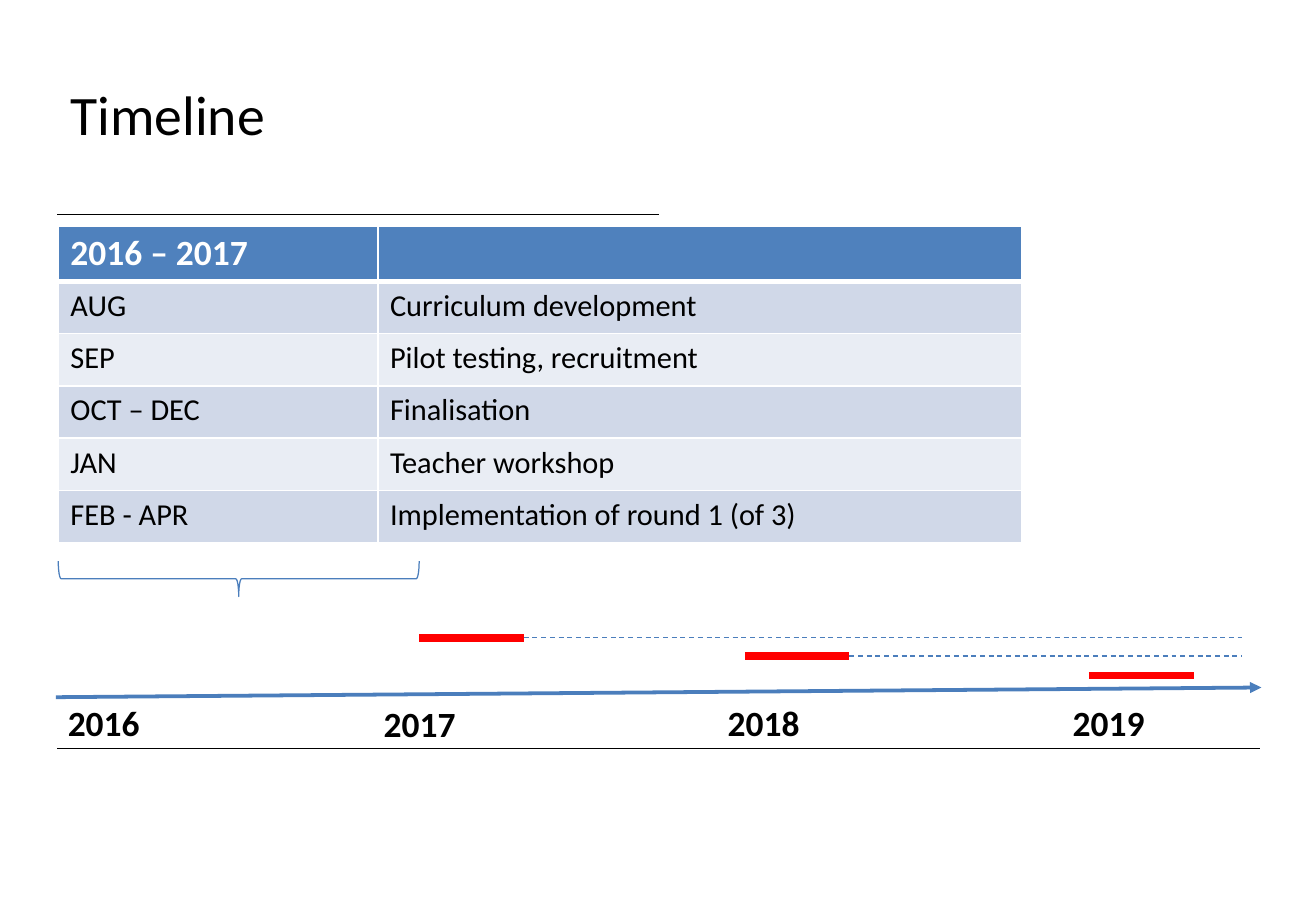
from lxml import etree
from pptx import Presentation
from pptx import util as u
from pptx.dml.color import RGBColor
from pptx.enum import dml, shapes, text
from pptx.oxml import ns

PX = 9144  # one hundredth of an inch
TITLE_ONLY = 5
BLACK, WHITE, RED = "000000", "FFFFFF", "FF0000"
LINE_BLUE, HEADER_BLUE = "4B7EBC", "4F81BD"
BANDS = ["D0D8E8", "E9EDF4"]

SCHEDULE = [
    ("2016 – 2017", ""),
    ("AUG", "Curriculum development"),
    ("SEP", "Pilot testing, recruitment"),
    ("OCT – DEC", "Finalisation"),
    ("JAN", "Teacher workshop"),
    ("FEB - APR", "Implementation of round 1 (of 3)"),
]
YEARS = [("2016", 46, 572), ("2017", 306, 573), ("2018", 589, 572), ("2019", 873, 572)]
ROUNDS = [(345, 431, 525), (613, 699, 540), (896, 983, 556)]
FOLLOW_UP_END = 1022


def px(*lengths):
    return [u.Emu(length * PX) for length in lengths]


def color(value):
    return RGBColor.from_string(value)


def write(frame, words, size=18, fill=BLACK, bold=False):
    para = frame.paragraphs[0]
    para.alignment = text.PP_ALIGN.LEFT
    para.space_before = u.Pt(0)
    span = para.add_run()
    span.text = words
    span.font.name = "Calibri"
    span.font.size = u.Pt(size)
    span.font.bold = bold
    span.font.color.rgb = color(fill)


def add_element(parent, tag, **attributes):
    return etree.SubElement(parent, ns.qn(tag), attributes)


def border_cell(cell, bottom):
    """Draw white borders; call before the cell gets its fill."""
    properties = cell._tc.get_or_add_tcPr()
    for side, width in [("L", 1), ("R", 1), ("T", 1), ("B", bottom)]:
        edge = add_element(properties, f"a:ln{side}", w=str(u.Pt(width)))
        add_element(add_element(edge, "a:solidFill"), "a:srgbClr", val=WHITE)


class Page:
    def __init__(self, deck):
        self.slide = deck.slides.add_slide(deck.slide_layouts[TITLE_ONLY])
        self.shapes = self.slide.shapes

    def title(self, words, left, top, width, height):
        box = self.shapes.title
        box.left, box.top, box.width, box.height = px(left, top, width, height)
        frame = box.text_frame
        frame.auto_size = text.MSO_AUTO_SIZE.NONE
        frame.vertical_anchor = text.MSO_ANCHOR.TOP
        frame.margin_left, frame.margin_right = px(12, 12)
        frame.margin_top, frame.margin_bottom = px(6, 6)
        write(frame, words, size=33)

    def label(self, words, left, top, width, height):
        frame = self.shapes.add_textbox(*px(left, top, width, height)).text_frame
        frame.word_wrap = True
        write(frame, words, size=21, bold=True)

    def line(self, start, end, stroke, width, dashed=False, arrow=False):
        line = self.shapes.add_connector(shapes.MSO_CONNECTOR.STRAIGHT, *px(*start, *end))
        line.line.color.rgb = color(stroke)
        line.line.width = u.Pt(width)
        if dashed:
            line.line.dash_style = dml.MSO_LINE.DASH
        if arrow:
            add_element(line.line._get_or_add_ln(), "a:tailEnd", type="triangle")
        add_element(line._element.spPr, "a:effectLst")

    def brace(self, left, top, width, height, rotation):
        brace = self.shapes.add_shape(shapes.MSO_SHAPE.LEFT_BRACE, *px(left, top, width, height))
        brace.rotation = rotation
        brace.shadow.inherit = False
        brace.fill.background()
        brace.line.color.rgb = color(LINE_BLUE)
        brace.line.width = u.Pt(0.75)

    def table(self, rows, left, top, columns, row_height):
        """Draw a table with a header row and banded rows below it."""
        size = px(sum(columns), row_height * len(rows))
        table = self.shapes.add_table(len(rows), len(columns), *px(left, top), *size).table
        for column, width in zip(table.columns, px(*columns)):
            column.width = width
        for index, row in enumerate(rows):
            header = index == 0
            for cell, words in zip(table.rows[index].cells, row):
                border_cell(cell, bottom=3 if header else 1)
                cell.fill.solid()
                cell.fill.fore_color.rgb = color(HEADER_BLUE if header else BANDS[(index - 1) % 2])
                if words:
                    write(cell.text_frame, words, size=21 if header else 18,
                          fill=WHITE if header else BLACK, bold=header)


def main():
    deck = Presentation()
    deck.slide_width, deck.slide_height = px(1083, 750)
    page = Page(deck)

    page.line((47, 616), (1037, 616), BLACK, 0.25)
    page.line((47, 176), (542, 176), BLACK, 0.25)
    page.title("Timeline", 46, 60, 496, 95)
    page.table(SCHEDULE, 48, 186, columns=[263, 530], row_height=43)

    page.line((46, 574), (1038, 566), LINE_BLUE, 2.25, arrow=True)
    for year, left, top in YEARS:
        page.label(year, left, top, 110, 45)
    page.brace(182, 328, 29, 297, rotation=270)

    for start, end, level in ROUNDS:
        page.line((start, level), (end, level), RED, 4.5)
    for _, start, level in ROUNDS[:-1]:
        page.line((start, level), (FOLLOW_UP_END, level), LINE_BLUE, 0.75, dashed=True)

    deck.save("out.pptx")


if __name__ == "__main__":
    main()
